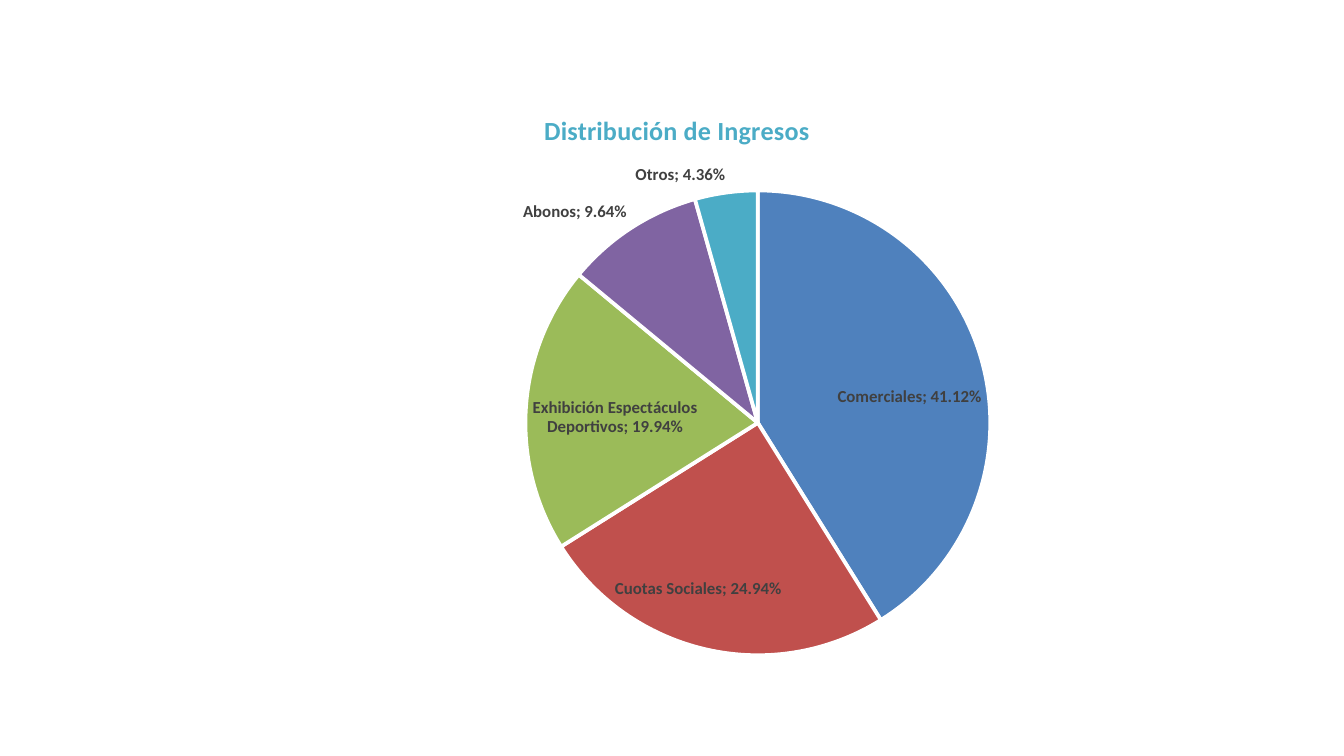
from lxml.etree import SubElement
from pptx import Presentation
from pptx.chart.data import CategoryChartData
from pptx.dml.color import RGBColor
from pptx.enum.chart import XL_CHART_TYPE, XL_LABEL_POSITION
from pptx.oxml import parse_xml
from pptx.oxml.ns import nsdecls, qn
from pptx.util import Pt

SHARES = {
    "Comerciales": (0.4112, "4F81BD"),
    "Cuotas Sociales": (0.2494, "C0504D"),
    "Exhibición Espectáculos Deportivos": (0.1994, "9BBB59"),
    "Abonos": (0.0964, "8064A2"),
    "Otros": (0.0436, "4BACC6"),
}


def color(code):
    return RGBColor.from_string(code)


def format_font(font, size, fill, bold=False, name="Calibri"):
    font.name, font.size, font.bold = name, Pt(size), bold
    font.color.rgb = color(fill)


def write(frame, text, **style):
    run = frame.paragraphs[0].add_run()
    run.text = text
    format_font(run.font, **style)


def layout(**parts):
    root = parse_xml(f"<c:layout {nsdecls('c')}/>")
    manual = SubElement(root, qn("c:manualLayout"))
    for tag, value in parts.items():
        SubElement(manual, qn(f"c:{tag}")).set("val", str(value))
    return root


class Deck:
    """Holds the chart style and the current slide."""

    title = dict(size=14, fill="4BACC6", bold=True)
    label = dict(size=9, fill="404040", bold=True)
    edge = "FFFFFF"

    def __init__(self, slide):
        self.slide = slide

    def pie(self, heading, shares, left, top, width, height):
        data = CategoryChartData(number_format="0.00%")
        data.categories = list(shares)
        data.add_series("Ingresos", [value for value, _ in shares.values()])
        box = map(Pt, (left, top, width, height))
        chart = self.slide.shapes.add_chart(XL_CHART_TYPE.PIE, *box, data).chart
        format_font(chart.font, 10, "000000")
        chart.has_legend = False
        self.head(chart, heading)
        self.paint(chart.plots[0], [code for _, code in shares.values()])
        self.mark(chart.plots[0])
        self.place(chart)

    def head(self, chart, text):
        write(chart.chart_title.text_frame, text, **self.title)
        chart.chart_title.include_in_layout = False

    def paint(self, plot, codes):
        plot.vary_by_categories = True
        for index, code in enumerate(codes):
            shape = plot.series[0].points[index].format
            shape.fill.solid()
            shape.fill.fore_color.rgb = color(code)
            shape.line.color.rgb = color(self.edge)
            shape.line.width = Pt(2)

    def mark(self, plot):
        labels = plot.series[0].data_labels
        format_font(labels.font, **self.label)
        labels.number_format = "0.00%"
        labels.number_format_is_linked = False
        labels.position = XL_LABEL_POSITION.BEST_FIT
        labels.show_category_name = labels.show_value = True
        labels.show_percentage = labels.show_legend_key = False
        split = parse_xml(f"<c:separator {nsdecls('c')}>; </c:separator>")
        labels._element.find(qn("c:showBubbleSize")).addnext(split)

    def place(self, chart):
        title = chart.chart_title._element
        area = chart._chartSpace.find(".//" + qn("c:plotArea"))
        spots = (
            (title, 1, layout(xMode="edge", yMode="edge", x=0.385, y=0.045)),
            (area, 0, layout(layoutTarget="inner", xMode="edge", yMode="edge",
                             x=0.373, y=0.185, w=0.403, h=0.781)),
        )
        for parent, index, spot in spots:
            for old in parent.findall(qn("c:layout")):
                parent.remove(old)
            parent.insert(index, spot)


def main():
    show = Presentation()
    show.slide_width, show.slide_height = Pt(720), Pt(405)
    deck = Deck(show.slides.add_slide(show.slide_layouts[6]))
    deck.pie("Distribución de Ingresos", SHARES, 51, 43, 618, 319)
    show.save("out.pptx")


if __name__ == "__main__":
    main()
